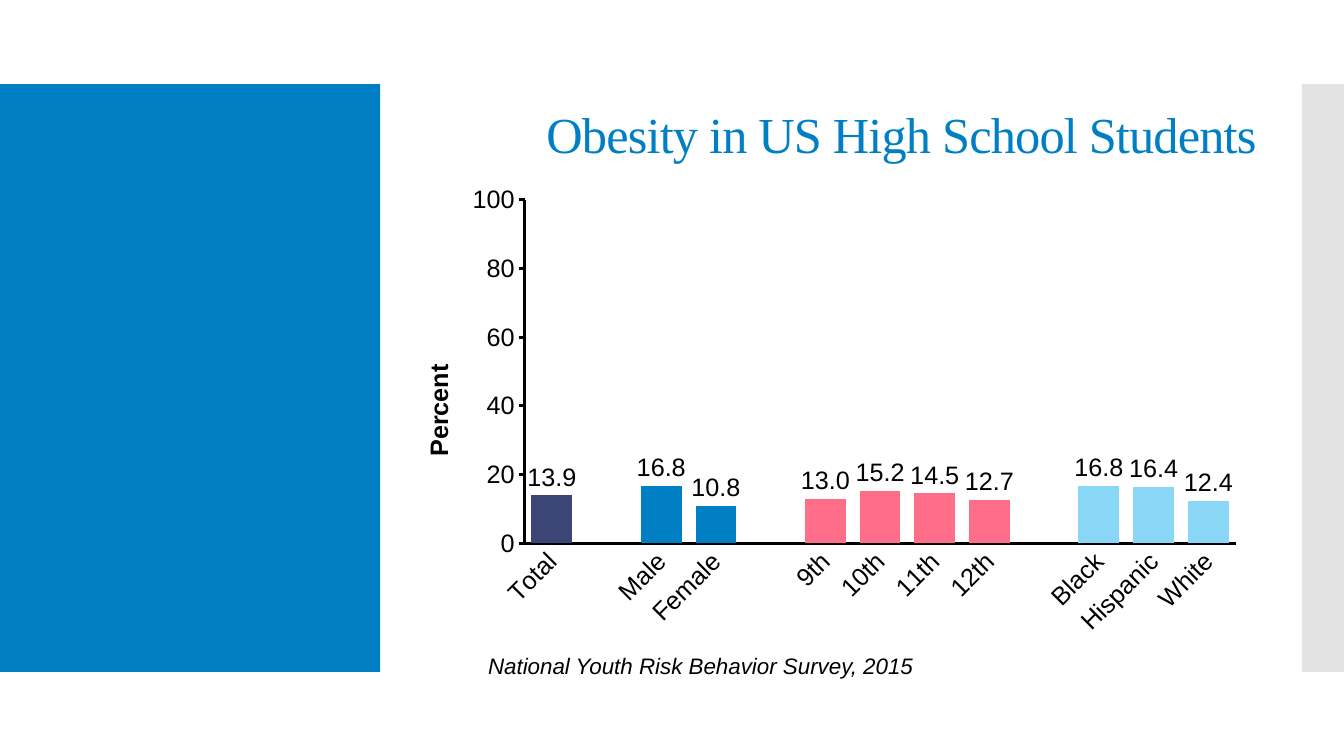
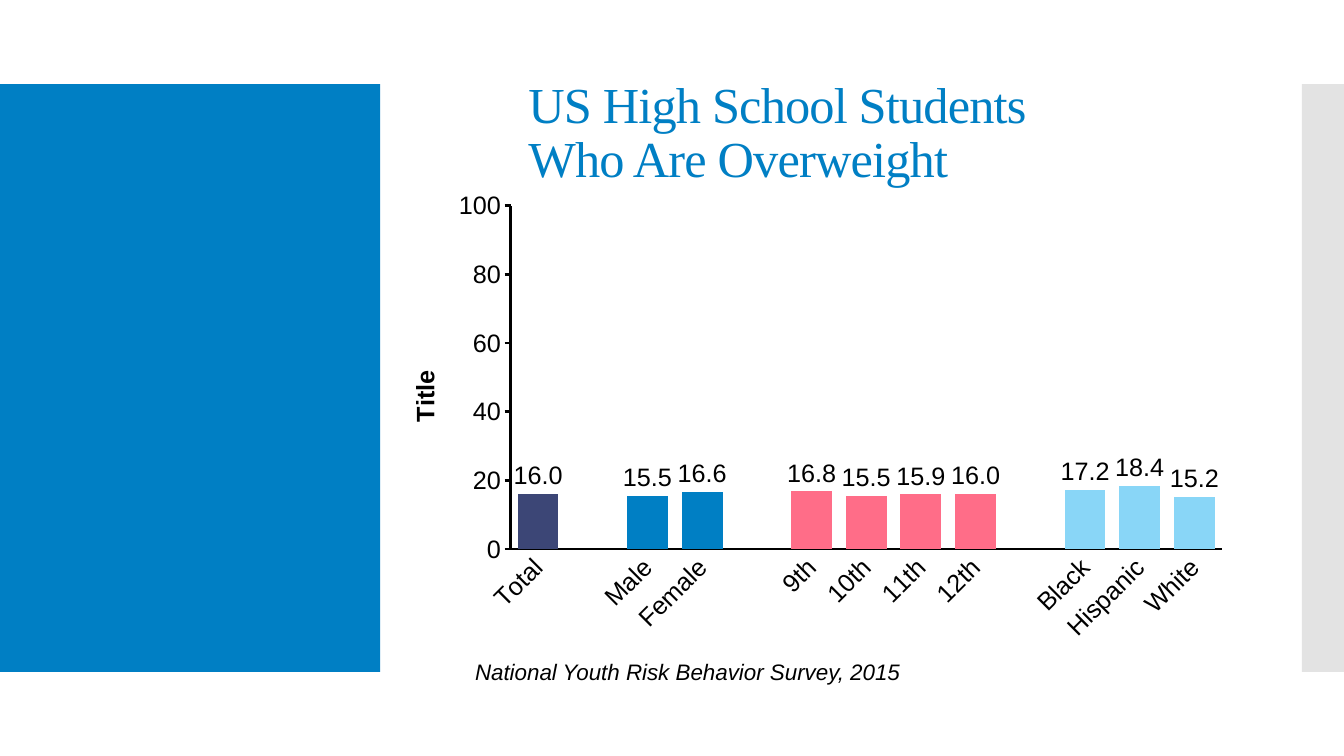
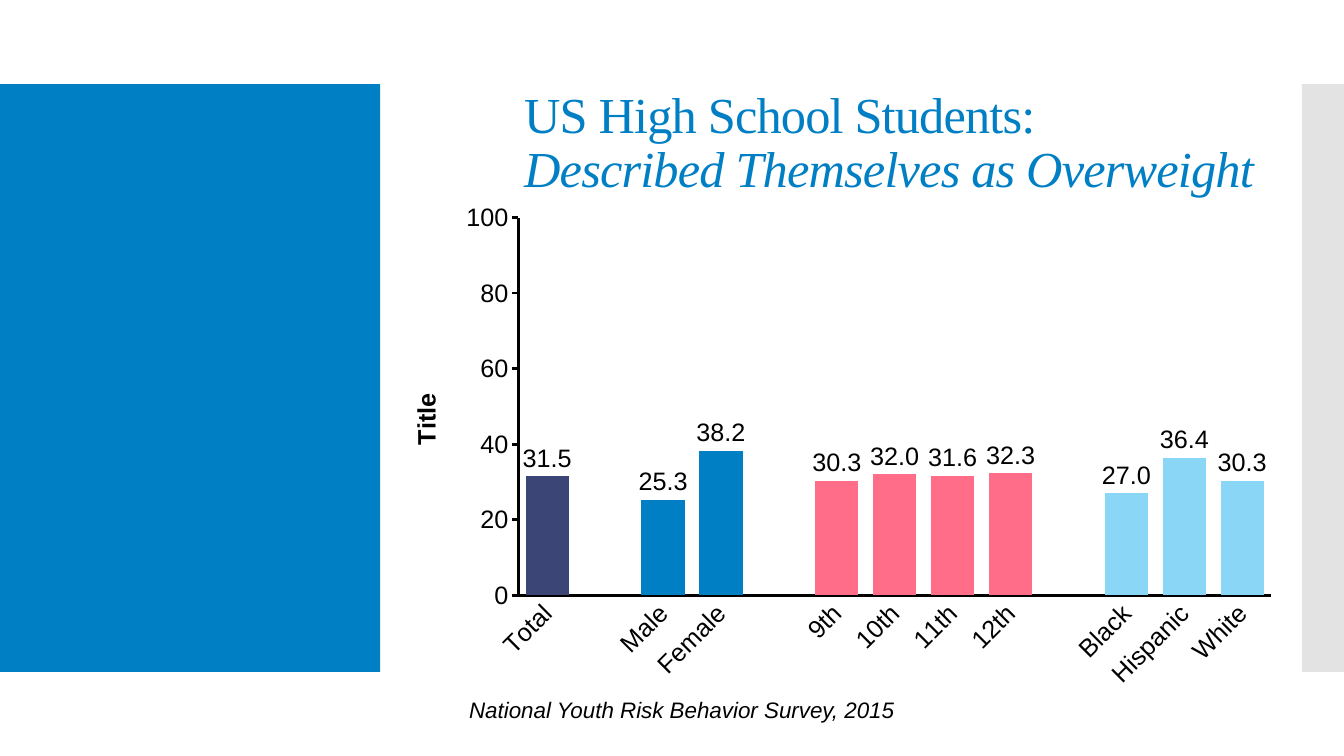
"""Build three slides charting weight survey results of US high school students."""
from dataclasses import dataclass
from itertools import chain

from pptx import Presentation
from pptx.chart.axis import CategoryAxis, ValueAxis
from pptx.chart.data import CategoryChartData
from pptx.dml.color import RGBColor
from pptx.enum.chart import XL_CHART_TYPE, XL_LABEL_POSITION, XL_TICK_MARK
from pptx.enum.shapes import MSO_SHAPE
from pptx.enum.text import MSO_ANCHOR, MSO_AUTO_SIZE, PP_ALIGN
from pptx.oxml import parse_xml
from pptx.oxml.ns import nsdecls, qn
from pptx.oxml.xmlchemy import BaseOxmlElement
from pptx.slide import Slide, SlideLayout
from pptx.text.text import Font
from pptx.util import Emu, Pt

COLUMN_CHART = XL_CHART_TYPE.COLUMN_CLUSTERED
ABOVE_BAR = XL_LABEL_POSITION.OUTSIDE_END
TICK_NONE = XL_TICK_MARK.NONE
TICK_OUT = XL_TICK_MARK.OUTSIDE
RECTANGLE = MSO_SHAPE.RECTANGLE
MIDDLE = MSO_ANCHOR.MIDDLE
FIXED_SIZE = MSO_AUTO_SIZE.NONE
GROW = MSO_AUTO_SIZE.SHAPE_TO_FIT_TEXT
LEFT = PP_ALIGN.LEFT
RIGHT = PP_ALIGN.RIGHT

BLUE = RGBColor(0x00, 0x7F, 0xC4)
NAVY = RGBColor(0x3C, 0x46, 0x76)
PINK = RGBColor(0xFF, 0x6D, 0x88)
SKY = RGBColor(0x89, 0xD6, 0xF7)
GRAY = RGBColor(0xC8, 0xC8, 0xC8)
BLACK = RGBColor(0x00, 0x00, 0x00)

CELL = 381000
COLUMNS, ROWS = 32, 18
TITLE_FONT, BODY_FONT = "Times New Roman", "Arial"
SOURCE = "National Youth Risk Behavior Survey, 2015"


@dataclass(frozen=True)
class Area:
    column: float
    row: float
    columns: float
    rows: float

    def emu(self) -> tuple[Emu, ...]:
        lengths = (self.column, self.row, self.columns, self.rows)
        return tuple(Emu(round(length * CELL)) for length in lengths)


@dataclass(frozen=True)
class Band:
    area: Area
    color: RGBColor
    opacity: int


@dataclass(frozen=True)
class Group:
    color: RGBColor
    labels: tuple[str, ...]


@dataclass(frozen=True)
class TitleLine:
    text: str
    italic: bool = False


@dataclass(frozen=True)
class Survey:
    title: tuple[TitleLine, ...]
    title_area: Area
    chart_area: Area
    plot_share: tuple[float, ...]
    source_area: Area
    axis_title: str
    values: tuple[tuple[float, ...], ...]


BANDS = (
    Band(Area(0, 2, 9.05, 14), BLUE, 100),
    Band(Area(31, 2, 1, 14), GRAY, 50),
)

GROUPS = (
    Group(NAVY, ("Total",)),
    Group(BLUE, ("Male", "Female")),
    Group(PINK, ("9th", "10th", "11th", "12th")),
    Group(SKY, ("Black", "Hispanic", "White")),
)

SURVEYS = (
    Survey(
        (TitleLine("Obesity in US High School Students"),),
        Area(12.77, 0.41, 17.74, 5.71),
        Area(9.43, 4.2, 20.4, 11.2),
        (0.15, 0.05, 0.83, 0.73),
        Area(8.78, 15.41, 13.2, 1.54),
        "Percent",
        ((13.9,), (16.8, 10.8), (13.0, 15.2, 14.5, 12.7), (16.8, 16.4, 12.4)),
    ),
    Survey(
        (TitleLine("US High School Students"), TitleLine("Who Are Overweight")),
        Area(12.34, 0.7, 18.02, 4.99),
        Area(9.1, 4.34, 20.4, 11.2),
        (0.15, 0.05, 0.83, 0.73),
        Area(8.47, 15.55, 13.2, 1.54),
        "Title",
        ((16.0,), (15.5, 16.6), (16.8, 15.5, 15.9, 16.0), (17.2, 18.4, 15.2)),
    ),
    Survey(
        (
            TitleLine("US High School Students:"),
            TitleLine("Described Themselves as Overweight", italic=True),
        ),
        Area(12.24, 0.82, 19.76, 5.23),
        Area(9.1, 4.58, 21.6, 12),
        (0.15, 0.05, 0.83, 0.75),
        Area(8.33, 16.46, 13.2, 1.54),
        "Title",
        ((31.5,), (25.3, 38.2), (30.3, 32.0, 31.6, 32.3), (27.0, 36.4, 30.3)),
    ),
)


def style(font: Font, name: str, size: int, color: RGBColor,
          bold: bool = False, italic: bool = False) -> None:
    font.name = name
    font.size = Pt(size)
    font.bold = bold
    font.italic = italic
    font.color.rgb = color


def spread(groups: list[list]) -> list:
    """Join the groups with one empty slot between neighbours."""
    return list(chain.from_iterable([None, *group] for group in groups))[1:]


def add_bands(slide: Slide, layout: SlideLayout) -> None:
    """Draw the side bands and move them to the shared layout."""
    for number, band in enumerate(BANDS):
        stripe = slide.shapes.add_shape(RECTANGLE, *band.area.emu())
        stripe.shadow.inherit = False
        stripe.fill.solid()
        stripe.fill.fore_color.rgb = band.color
        stripe.line.fill.background()
        tint = stripe.element.spPr.find(qn("a:solidFill"))[0]
        if band.opacity < 100:
            tint.append(parse_xml(
                f'<a:alpha {nsdecls("a")} val="{band.opacity * 1000}"/>'))
        stripe.element.nvSpPr.cNvPr.set("id", str(100 + number))
        layout.shapes.element.insert(2 + number, stripe.element)


def add_title(slide: Slide, survey: Survey) -> None:
    heading = slide.shapes.title
    heading.left, heading.top, heading.width, heading.height = survey.title_area.emu()
    frame = heading.text_frame
    frame.word_wrap = True
    frame.auto_size = FIXED_SIZE
    frame.vertical_anchor = MIDDLE
    paragraph = frame.paragraphs[0]
    paragraph.alignment = LEFT
    paragraph.line_spacing = 0.9
    for number, line in enumerate(survey.title):
        if number:
            paragraph.add_line_break()
        run = paragraph.add_run()
        run.text = line.text
        style(run.font, TITLE_FONT, 36, BLUE, italic=line.italic)
        run.font._element.set("spc", "-60")


def add_source(slide: Slide, area: Area) -> None:
    frame = slide.shapes.add_textbox(*area.emu()).text_frame
    frame.word_wrap = True
    frame.auto_size = GROW
    paragraph = frame.paragraphs[0]
    paragraph.alignment = RIGHT
    run = paragraph.add_run()
    run.text = SOURCE
    style(run.font, BODY_FONT, 16, BLACK, italic=True)


def set_layout(parent: BaseOxmlElement, index: int, x: float, y: float,
               size: tuple[float, ...] = ()) -> None:
    """Place a chart part by shares of the chart's size."""
    for old in parent.findall(qn("c:layout")):
        parent.remove(old)
    target = '<c:layoutTarget val="inner"/>' if size else ""
    lengths = "".join(f'<c:{tag} val="{share}"/>'
                      for tag, share in zip(("x", "y", "w", "h"), (x, y, *size)))
    parent.insert(index, parse_xml(
        f'<c:layout {nsdecls("c")}><c:manualLayout>{target}'
        f'<c:xMode val="edge"/><c:yMode val="edge"/>{lengths}'
        '</c:manualLayout></c:layout>'))


def format_axis(axis: CategoryAxis | ValueAxis, tick: XL_TICK_MARK) -> None:
    axis.has_major_gridlines = False
    axis.major_tick_mark = tick
    axis.minor_tick_mark = TICK_NONE
    axis.format.line.color.rgb = BLACK
    axis.format.line.width = Pt(2)
    style(axis.tick_labels.font, BODY_FONT, 18, BLACK)


def add_axis_title(axis: ValueAxis, text: str) -> None:
    frame = axis.axis_title.text_frame
    run = frame.paragraphs[0].add_run()
    run.text = text
    style(run.font, BODY_FONT, 18, BLACK, bold=True)
    direction = frame._txBody.bodyPr
    direction.set("rot", "-5400000")
    direction.set("vert", "horz")
    set_layout(axis.axis_title._element, 1, 0.025, 0.39)


def add_survey_chart(slide: Slide, survey: Survey) -> None:
    data = CategoryChartData(number_format="General")
    data.categories = [label or "" for label in spread([g.labels for g in GROUPS])]
    data.add_series("Series 1", spread(survey.values))
    chart = slide.shapes.add_chart(COLUMN_CHART, *survey.chart_area.emu(), data).chart
    chart.has_legend = False
    chart.has_title = False
    style(chart.font, BODY_FONT, 18, BLACK)

    format_axis(chart.category_axis, TICK_NONE)
    chart.category_axis._element.txPr.bodyPr.set("rot", "-2700000")
    percent = chart.value_axis
    format_axis(percent, TICK_OUT)
    percent.minimum_scale, percent.maximum_scale, percent.major_unit = 0, 100, 20
    add_axis_title(percent, survey.axis_title)

    bars = chart.plots[0]
    bars.vary_by_categories = False
    bars.gap_width = 34
    bars.overlap = 100
    series = bars.series[0]
    series.format.fill.solid()
    series.format.fill.fore_color.rgb = BLUE
    for index, color in enumerate(spread([[g.color] * len(g.labels) for g in GROUPS])):
        if color is not None:
            fill = series.points[index].format.fill
            fill.solid()
            fill.fore_color.rgb = color
    labels = series.data_labels
    labels.show_value = True
    labels.number_format = "#,##0.0"
    labels.number_format_is_linked = False
    labels.position = ABOVE_BAR
    style(labels.font, BODY_FONT, 18, BLACK)

    x, y, *size = survey.plot_share
    set_layout(chart._chartSpace.chart.plotArea, 0, x, y, tuple(size))


def main() -> None:
    deck = Presentation()
    deck.slide_width = Emu(COLUMNS * CELL)
    deck.slide_height = Emu(ROWS * CELL)
    layout = deck.slide_layouts.get_by_name("Title Only")
    for number, survey in enumerate(SURVEYS):
        slide = deck.slides.add_slide(layout)
        if number == 0:
            add_bands(slide, layout)
        add_title(slide, survey)
        add_survey_chart(slide, survey)
        add_source(slide, survey.source_area)
    deck.save("out.pptx")


if __name__ == "__main__":
    main()
